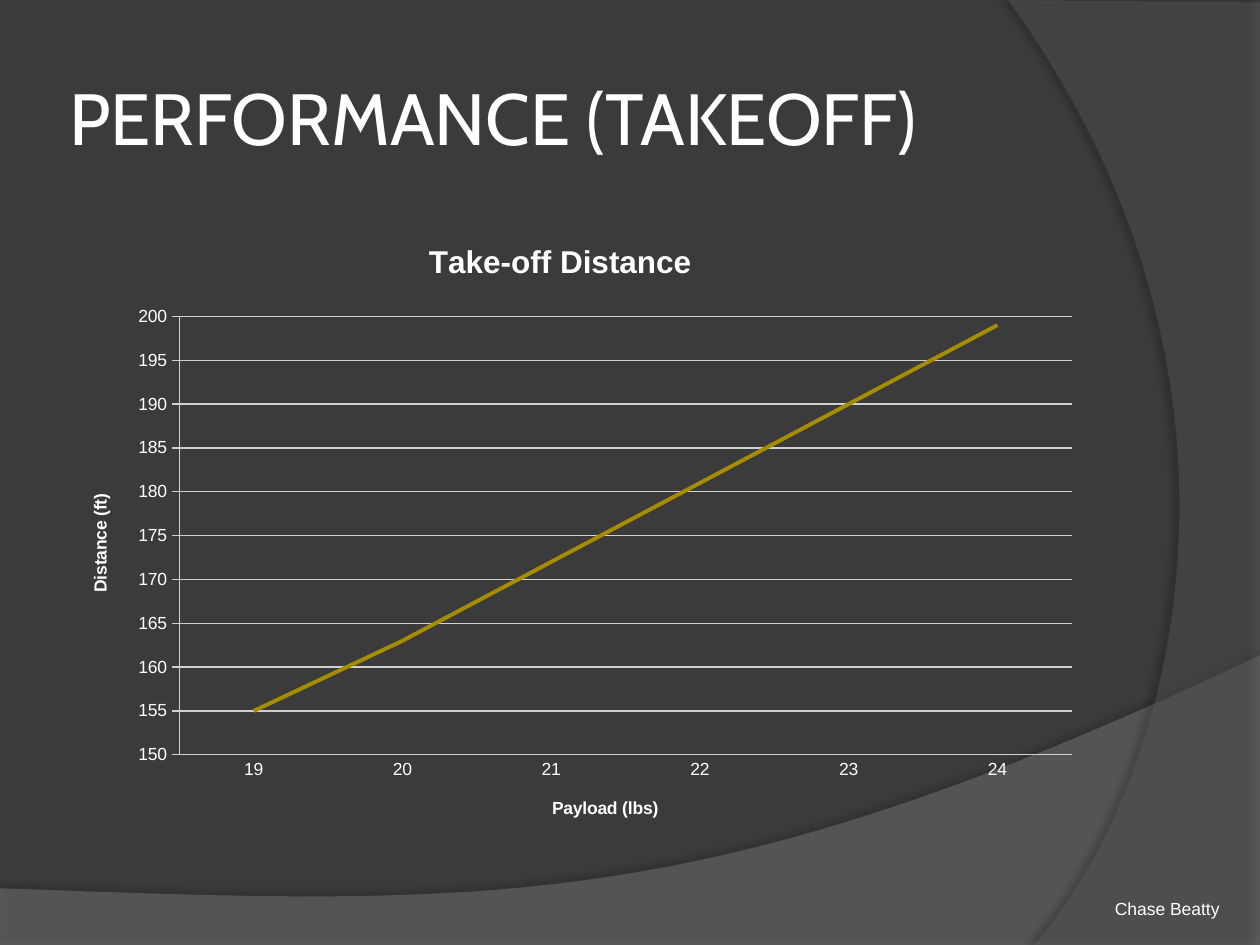
"""Builds the take-off performance slide."""
from dataclasses import dataclass

from lxml.etree import SubElement
from pptx import Presentation
from pptx.chart.data import CategoryChartData
from pptx.dml.color import RGBColor
from pptx.enum.chart import XL_CHART_TYPE, XL_TICK_MARK
from pptx.enum.text import MSO_ANCHOR, MSO_AUTO_SIZE
from pptx.oxml import parse_xml
from pptx.oxml.ns import nsdecls, qn
from pptx.util import Inches, Pt

COLUMNS, ROWS = 10, 7.5
WIDTH, HEIGHT = Inches(10), Inches(7.5)


@dataclass(frozen=True)
class Theme:
    """Colours, fonts and type sizes of the slide."""
    background: str = "3B3B3B"
    hill: str = "7F7F7F"
    arc: str = "5E5E5E"
    text: str = "FFFFFF"
    grid: str = "D0D0D0"
    line: str = "A88C00"
    heading_font: str = "Cabin"
    body_font: str = "Arial"
    heading: float = 41.4
    chart_title: float = 18
    body: float = 10


Point = tuple[float, float]


def locate(column: float, row: float) -> tuple[int, int]:
    """Turn a grid position into slide units."""
    return round(column * WIDTH / COLUMNS), round(row * HEIGHT / ROWS)


@dataclass(frozen=True)
class Box:
    """A frame given in columns and rows of the slide's grid."""
    left: float
    top: float
    width: float
    height: float

    def frame(self) -> tuple[int, ...]:
        """Return left, top, width and height in slide units."""
        return (*locate(self.left, self.top), *locate(self.width, self.height))


@dataclass(frozen=True)
class Sweep:
    """A background area whose last edge is a curve, in grid positions."""
    corners: tuple[Point, ...]
    controls: tuple[Point, Point]
    color: str
    opacity: int
    shadow_opacity: int
    shadow_distance: float
    shadow_angle: int


THEME = Theme()
SWEEPS = (
    Sweep(((0, 7.05), (0, 7.51), (10, 7.51), (10, 5.2), (0, 7.05)),
          ((5.59, 7.29), (3.91, 7.19)), THEME.hill, 45, 35, 3.5, 270),
    Sweep(((10, 0.02), (10, 7.5), (8.21, 7.5), (8, 0)),
          ((9.35, 6.19), (10.18, 3)), THEME.arc, 40, 45, 4, 180),
)


def draw_sweep(page, sweep: Sweep) -> None:
    """Draw a translucent curved area with a soft shadow."""
    corners = [locate(*corner) for corner in sweep.corners]
    builder = page.shapes.build_freeform(*corners[0])
    builder.add_line_segments(corners[1:], close=True)
    shape = builder.convert_to_shape()
    properties = shape.element.spPr
    edge = next(line for line in properties.iter(qn("a:lnTo"))
                if (int(line[0].get("x")) + shape.left, int(line[0].get("y")) + shape.top)
                == corners[-1])
    edge.tag = qn("a:cubicBezTo")
    for index, control in enumerate(sweep.controls):
        x, y = locate(*control)
        edge.insert(index, parse_xml(
            f'<a:pt {nsdecls("a")} x="{x - shape.left}" y="{y - shape.top}"/>'))
    shape.line.fill.background()
    shape.fill.solid()
    shape.fill.fore_color.rgb = RGBColor.from_string(sweep.color)
    color = properties.find(f"{qn('a:solidFill')}/{qn('a:srgbClr')}")
    SubElement(color, qn("a:alpha"), val=str(sweep.opacity * 1000))
    shape.shadow.inherit = False
    properties.find(qn("a:effectLst")).append(parse_xml(
        f'<a:outerShdw {nsdecls("a")} blurRad="{Pt(4)}" dist="{Pt(sweep.shadow_distance)}" '
        f'dir="{sweep.shadow_angle * 60000}" rotWithShape="0"><a:srgbClr val="000000">'
        f'<a:alpha val="{sweep.shadow_opacity * 1000}"/></a:srgbClr></a:outerShdw>'))


def style_font(font, size: float, name: str = THEME.body_font, bold: bool = False) -> None:
    """Set the face, size and colour of a font."""
    font.name, font.size, font.bold = name, Pt(size), bold
    font.color.rgb = RGBColor.from_string(THEME.text)


def add_text(page, box: Box, text: str, *, size: float, font: str, wrap: bool,
             anchor=MSO_ANCHOR.TOP, auto_size=MSO_AUTO_SIZE.NONE, inset: float | None = None) -> None:
    """Add a text box holding one formatted line."""
    frame = page.shapes.add_textbox(*box.frame()).text_frame
    frame.word_wrap, frame.vertical_anchor, frame.auto_size = wrap, anchor, auto_size
    if inset is not None:
        frame.margin_left = frame.margin_right = Inches(inset)
        frame.margin_top = frame.margin_bottom = Inches(inset)
    span = frame.paragraphs[0].add_run()
    span.text = text
    style_font(span.font, size, font)


def place(element, index: int, **percents: float) -> None:
    """Give a chart part a manual position in percent of the chart."""
    layout = element.find(qn("c:layout"))
    if layout is not None:
        element.remove(layout)
    layout = parse_xml(f'<c:layout {nsdecls("c")}><c:manualLayout/></c:layout>')
    if "w" in percents:
        SubElement(layout[0], qn("c:layoutTarget"), val="inner")
    for key in ("x", "y"):
        SubElement(layout[0], qn(f"c:{key}Mode"), val="edge")
    for key, percent in percents.items():
        SubElement(layout[0], qn(f"c:{key}"), val=str(percent / 100))
    element.insert(index, layout)


def add_title(owner, text: str, size: float, x: float, y: float) -> None:
    """Title a chart or an axis in bold at a set position."""
    title = owner.chart_title if hasattr(owner, "chart_title") else owner.axis_title
    span = title.text_frame.paragraphs[0].add_run()
    span.text = text
    style_font(span.font, size, bold=True)
    place(title.element, 1, x=x, y=y)


def style_line(line, color: str, width: float) -> None:
    """Set the colour and width of a line."""
    line.color.rgb = RGBColor.from_string(color)
    line.width = Pt(width)


def add_distance_chart(page, box: Box) -> None:
    """Add the line chart of take-off distance by payload."""
    data = CategoryChartData()
    data.categories = [str(payload) for payload in range(19, 25)]
    data.add_series("Series 1", (155, 163, 172, 181, 190, 199))
    chart = page.shapes.add_chart(XL_CHART_TYPE.LINE, *box.frame(), data).chart
    chart.has_legend = False
    style_font(chart.font, THEME.body)
    add_title(chart, "Take-off Distance", THEME.chart_title, 35, 2.4)

    across, upward = chart.category_axis, chart.value_axis
    add_title(across, "Payload (lbs)", THEME.body, 47.2, 91.8)
    add_title(upward, "Distance (ft)", THEME.body, 2.2, 43.3)
    across.major_tick_mark = XL_TICK_MARK.NONE
    upward.major_tick_mark = XL_TICK_MARK.CROSS
    upward.minimum_scale, upward.maximum_scale, upward.major_unit = 150, 200, 5
    upward.has_major_gridlines = True
    for line in (across.format.line, upward.format.line, upward.major_gridlines.format.line):
        style_line(line, THEME.grid, 0.75)

    plot = chart.plots[0]
    plot.vary_by_categories = False
    series = plot.series[0]
    series.smooth = False
    style_line(series.format.line, THEME.line, 2.25)
    area = chart.element.find(f"{qn('c:chart')}/{qn('c:plotArea')}")
    place(area, 0, x=11.3, y=15.4, w=86.7, h=70.3)


def main() -> None:
    """Build and save the deck."""
    deck = Presentation()
    deck.slide_width, deck.slide_height = WIDTH, HEIGHT
    page = deck.slides.add_slide(deck.slide_layouts[6])
    page.background.fill.solid()
    page.background.fill.fore_color.rgb = RGBColor.from_string(THEME.background)
    for sweep in SWEEPS:
        draw_sweep(page, sweep)
    add_text(page, Box(0.5, 0.3, 8.17, 1.25), "PERFORMANCE (TAKEOFF)", size=THEME.heading,
             font=THEME.heading_font, wrap=True, anchor=MSO_ANCHOR.MIDDLE, inset=0.05)
    add_text(page, Box(8.75, 7.08, 1.04, 0.27), "Chase Beatty", size=THEME.body,
             font=THEME.body_font, wrap=False, auto_size=MSO_AUTO_SIZE.SHAPE_TO_FIT_TEXT)
    add_distance_chart(page, Box(0.5, 1.75, 8.17, 4.95))
    deck.save("out.pptx")


if __name__ == "__main__":
    main()
